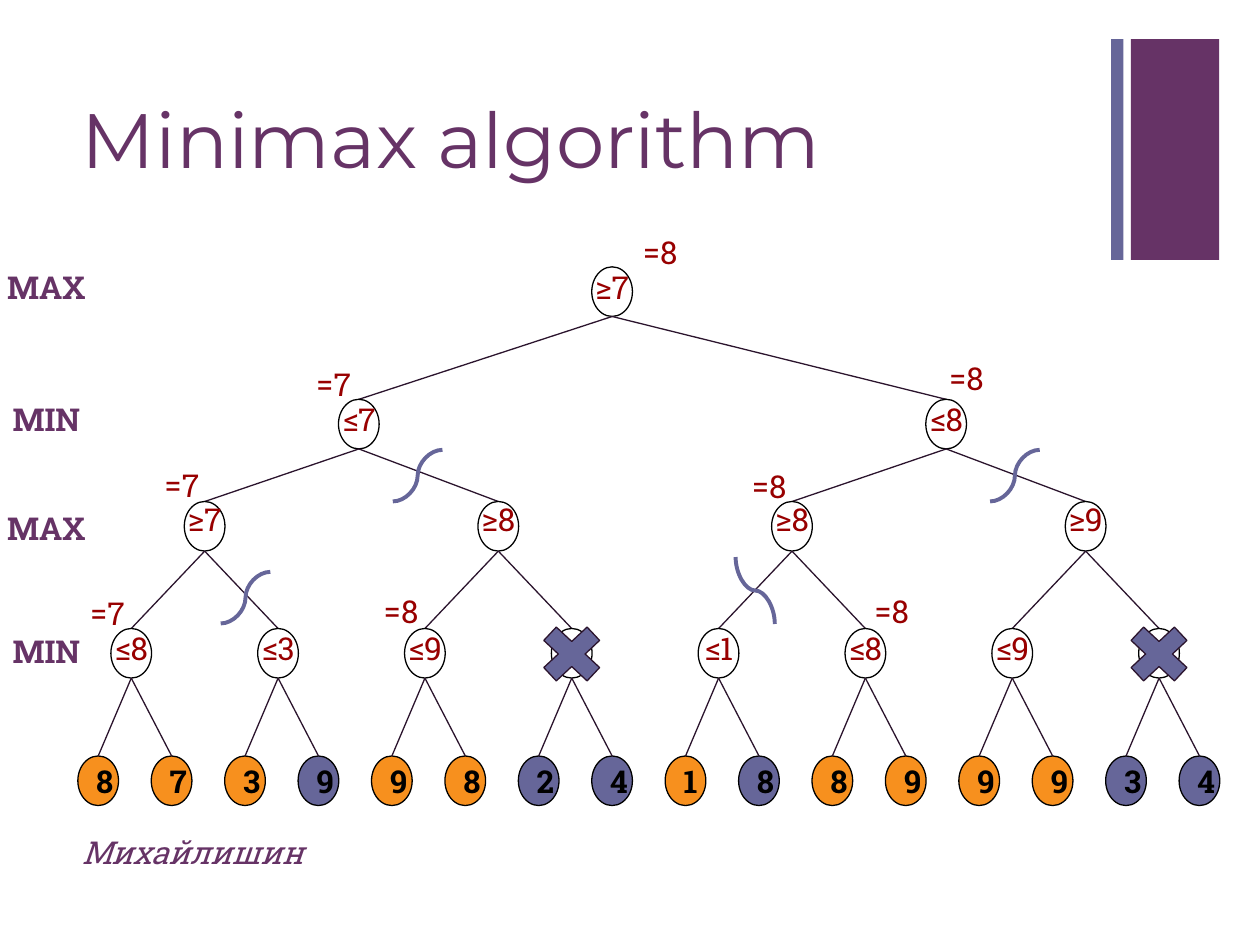
from lxml.etree import SubElement
from pptx import Presentation
from pptx.dml.color import RGBColor
from pptx.enum.shapes import MSO_CONNECTOR, MSO_SHAPE
from pptx.enum.text import MSO_ANCHOR, MSO_AUTO_SIZE, PP_ALIGN
from pptx.oxml.ns import qn
from pptx.util import Cm, Pt

COLORS = {
    "plum": "663366",
    "slate": "666699",
    "orange": "F7901E",
    "white": "FFFFFF",
    "black": "000000",
    "edge": "2B142D",
    "value": "980000",
}
BODY_FONT = "Roboto Slab"
TITLE_FONT = "Montserrat"

NODE_WIDTH, NODE_HEIGHT = 0.82, 1.0
VALUE_WIDTH, VALUE_HEIGHT = 1.52, 0.94
LEAF_STEP = 1.48
LEVELS = [
    {"top": 0, "first": 7, "step": 16, "lift": 0.23, "values": ["≥7"]},
    {"top": 2.67, "first": 3.55, "step": 8, "lift": 0.23, "values": ["≤7", "≤8"]},
    {"top": 4.73, "first": 1.45, "step": 4, "lift": 0.28,
     "values": ["≥7", "≥8", "≥8", "≥9"]},
    {"top": 7.29, "first": 0.45, "step": 2, "lift": 0.23,
     "values": ["≤8", "≤3", "≤9", None, "≤1", "≤8", "≤9", None]},
    {"top": 9.86, "first": 0, "step": 1, "lift": 0, "values": list("8739982418899934")},
]
PRUNED_LEAVES = {3, 6, 7, 9, 14, 15}
RESULTS = [
    (2, 0, "=7", -0.46, -0.69),
    (3, 0, "=7", -0.48, -0.71),
    (1, 0, "=7", -0.51, -0.71),
    (3, 5, "=8", 0.53, -0.76),
    (2, 2, "=8", -0.46, -0.66),
    (3, 2, "=8", -0.48, -0.76),
    (1, 1, "=8", 0.41, -0.84),
    (0, 0, "=8", 0.97, -0.71),
]
RISING_CUTS = [(2.88, 6.15), (6.35, 3.69), (18.39, 3.69)]
PLAYERS = [("MAX", 0), ("MIN", 2.66), ("MAX", 4.85), ("MIN", 7.34)]


def color(name):
    return RGBColor.from_string(COLORS[name])


def write(shape, text, color_name, size=18, font=BODY_FONT, align=PP_ALIGN.CENTER,
          anchor=MSO_ANCHOR.TOP, bold=False, italic=False):
    frame = shape.text_frame
    frame.word_wrap = True
    frame.auto_size = MSO_AUTO_SIZE.NONE
    frame.vertical_anchor = anchor
    frame.margin_left = frame.margin_right = Cm(0.25)
    frame.margin_top = frame.margin_bottom = Cm(0.25)
    paragraph = frame.paragraphs[0]
    paragraph.alignment = align
    run = paragraph.add_run()
    run.text = text
    run.font.size = Pt(size)
    run.font.name = font
    run.font.bold = bold
    run.font.italic = italic
    run.font.color.rgb = color(color_name)
    return paragraph


def add_text(slide, left, top, width, height, text, color_name, **style):
    shape = slide.shapes.add_textbox(Cm(left), Cm(top), Cm(width), Cm(height))
    write(shape, text, color_name, **style)


def add_filled(slide, kind, left, top, width, height, fill, line=None):
    shape = slide.shapes.add_shape(kind, Cm(left), Cm(top), Cm(width), Cm(height))
    shape.shadow.inherit = False
    shape.fill.solid()
    shape.fill.fore_color.rgb = color(fill)
    if line:
        shape.line.color.rgb = color(line)
        shape.line.width = Pt(0.75)
    else:
        shape.line.fill.background()
    return shape


def add_line(slide, start, end, color_name="edge", width=0.75, kind=MSO_CONNECTOR.STRAIGHT):
    connector = slide.shapes.add_connector(kind, *[Cm(value) for value in (*start, *end)])
    connector.line.color.rgb = color(color_name)
    connector.line.width = Pt(width)
    properties = connector._element.spPr
    SubElement(properties, qn("a:effectLst"))
    return properties


def add_banner(slide, left, top, height):
    add_filled(slide, MSO_SHAPE.RECTANGLE, left + 0.4, top, 1.78, height, "plum")
    add_filled(slide, MSO_SHAPE.RECTANGLE, left, top, 0.25, height, "slate")


def add_title(slide, left, top, width, height):
    title = slide.shapes.title
    title.left, title.top, title.width, title.height = Cm(left), Cm(top), Cm(width), Cm(height)
    paragraph = write(title, "Minimax algorithm", "plum", size=44, font=TITLE_FONT,
                      align=PP_ALIGN.LEFT, anchor=MSO_ANCHOR.MIDDLE)
    paragraph.line_spacing = 0.9


def node_center(left, level, index):
    return left + (level["first"] + index * level["step"]) * LEAF_STEP + NODE_WIDTH / 2


def add_value(slide, center, top, text):
    add_text(slide, center - VALUE_WIDTH / 2, top, VALUE_WIDTH, VALUE_HEIGHT, text, "value")


def add_node(slide, center, top, fill):
    return add_filled(slide, MSO_SHAPE.OVAL, center - NODE_WIDTH / 2, top,
                      NODE_WIDTH, NODE_HEIGHT, fill, "black")


def add_leaves(slide, left, top):
    level = LEVELS[-1]
    for index, value in enumerate(level["values"]):
        fill = "slate" if index in PRUNED_LEAVES else "orange"
        leaf = add_node(slide, node_center(left, level, index), top + level["top"], fill)
        write(leaf, value, "black", anchor=MSO_ANCHOR.MIDDLE, bold=True)


def add_inner_nodes(slide, left, top):
    for level, children in zip(LEVELS, LEVELS[1:]):
        node_top = top + level["top"]
        for index, value in enumerate(level["values"]):
            center = node_center(left, level, index)
            add_node(slide, center, node_top, "white")
            for child in (2 * index, 2 * index + 1):
                add_line(slide, (center, node_top + NODE_HEIGHT),
                         (node_center(left, children, child), top + children["top"]))
            if value:
                add_value(slide, center, node_top - level["lift"], value)
            else:
                add_filled(slide, MSO_SHAPE.MATH_MULTIPLY, center - 0.84, node_top - 0.27,
                           1.68, 1.57, "slate", "edge")


def add_cuts(slide, left, top):
    style = {"color_name": "slate", "width": 2.25, "kind": MSO_CONNECTOR.CURVE}
    for x, y in RISING_CUTS:
        add_line(slide, (left + x, top + y + 1.04), (left + x + 1, top + y), **style)
    falling = add_line(slide, (left + 14.33, top + 6.13), (left + 12.98, top + 6.92), **style)
    falling.find(qn("a:xfrm")).set("rot", str(270 * 60000))


def add_results(slide, left, top):
    for depth, index, text, across, down in RESULTS:
        level = LEVELS[depth]
        add_value(slide, node_center(left, level, index) + across,
                  top + level["top"] - level["lift"] + down, text)


def add_tree(slide, left, top):
    add_leaves(slide, left, top)
    add_inner_nodes(slide, left, top)
    add_cuts(slide, left, top)
    add_results(slide, left, top)


def add_players(slide, left, top, width):
    for player, offset in PLAYERS:
        add_text(slide, left, top + offset, width, 1.04, player, "plum", bold=True)


def main():
    presentation = Presentation()
    presentation.slide_width, presentation.slide_height = Cm(25.4), Cm(19.05)
    slide = presentation.slides.add_slide(presentation.slide_layouts[5])
    add_banner(slide, 22.4, 0.79, 4.45)
    add_title(slide, 1.4, 1.35, 20.98, 3.1)
    add_text(slide, 1.4, 16.54, 10.92, 1.7, "Михайлишин", "plum",
             align=PP_ALIGN.LEFT, italic=True)
    add_tree(slide, 1.57, 5.38)
    add_players(slide, -0.46, 5.16, 2.79)
    presentation.save("out.pptx")


if __name__ == "__main__":
    main()
